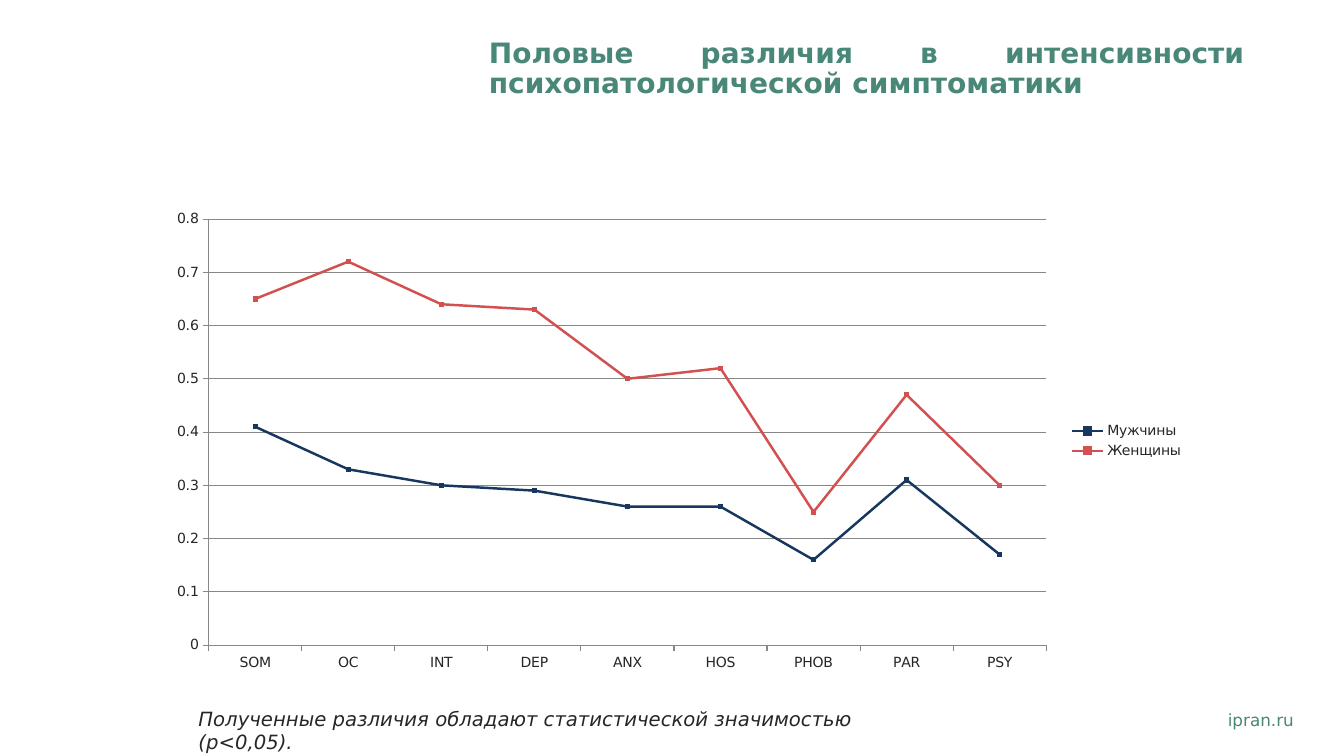
import pptx
import pptx.chart.data
import pptx.dml.color
import pptx.enum.chart
import pptx.enum.text
import pptx.util
from pptx.util import Inches

FONT = "DejaVu Sans"
COLORS = {
    "accent": "498779",
    "text": "262626",
    "grid": "878787",
    "men": "17375E",
    "women": "D25050",
}
SCALES = ("SOM", "OC", "INT", "DEP", "ANX", "HOS", "PHOB", "PAR", "PSY")
SERIES = (
    ("Мужчины", "men", (0.41, 0.33, 0.3, 0.29, 0.26, 0.26, 0.16, 0.31, 0.17)),
    ("Женщины", "women", (0.65, 0.72, 0.64, 0.63, 0.5, 0.52, 0.25, 0.47, 0.3)),
)


def rgb(name):
    return pptx.dml.color.RGBColor.from_string(COLORS[name])


def style_font(font, size, color):
    font.name = FONT
    font.size = pptx.util.Pt(size)
    font.color.rgb = rgb(color)


def add_text(slide, box, text, size, color):
    """Add a one-paragraph text box and return its paragraph."""
    shape = slide.shapes.add_textbox(*map(Inches, box))
    frame = shape.text_frame
    frame.word_wrap = True
    paragraph = frame.paragraphs[0]
    paragraph.text = text
    style_font(paragraph.font, size, color)
    return paragraph


def style_axis(axis):
    axis.major_tick_mark = pptx.enum.chart.XL_TICK_MARK.OUTSIDE
    axis.minor_tick_mark = pptx.enum.chart.XL_TICK_MARK.NONE
    axis.format.line.color.rgb = rgb("grid")
    axis.format.line.width = pptx.util.Pt(0.75)


def style_series(series, color):
    series.smooth = False
    series.format.line.color.rgb = rgb(color)
    series.format.line.width = pptx.util.Pt(1.75)
    marker = series.marker
    marker.style = pptx.enum.chart.XL_MARKER_STYLE.SQUARE
    marker.size = 3
    marker.format.fill.solid()
    marker.format.fill.fore_color.rgb = rgb(color)
    marker.format.line.color.rgb = rgb(color)


def add_symptom_chart(slide, box):
    data = pptx.chart.data.CategoryChartData()
    data.categories = SCALES
    for name, _, values in SERIES:
        data.add_series(name, values)
    chart = slide.shapes.add_chart(
        pptx.enum.chart.XL_CHART_TYPE.LINE_MARKERS, *map(Inches, box), data
    ).chart
    chart.has_title = False
    style_font(chart.font, 10, "text")
    chart.plots[0].vary_by_categories = False
    for series, (_, color, _) in zip(chart.plots[0].series, SERIES):
        style_series(series, color)

    style_axis(chart.category_axis)
    value_axis = chart.value_axis
    style_axis(value_axis)
    value_axis.minimum_scale, value_axis.maximum_scale = 0, 0.8
    value_axis.major_unit = 0.1
    value_axis.has_major_gridlines = True
    gridline = value_axis.major_gridlines.format.line
    gridline.color.rgb = rgb("grid")
    gridline.width = pptx.util.Pt(0.75)

    chart.has_legend = True
    chart.legend.position = pptx.enum.chart.XL_LEGEND_POSITION.RIGHT
    chart.legend.include_in_layout = False


def main():
    presentation = pptx.Presentation()
    presentation.slide_width = Inches(13.33)
    presentation.slide_height = Inches(7.5)
    slide = presentation.slides.add_slide(presentation.slide_layouts[6])

    add_text(slide, (12.08, 6.99, 1.04, 0.3), "ipran.ru", 12, "accent")
    title = add_text(
        slide, (4.75, 0.34, 7.69, 0.56),
        "Половые различия в интенсивности психопатологической симптоматики",
        20, "accent",
    )
    title.font.bold = True
    title.alignment = pptx.enum.text.PP_ALIGN.JUSTIFY
    title.line_spacing = 0.9
    add_symptom_chart(slide, (1.55, 2, 10.29, 4.75))
    caption = add_text(
        slide, (1.87, 6.96, 7.62, 0.34),
        "Полученные различия обладают статистической значимостью (p<0,05).",
        14, "text",
    )
    caption.font.italic = True

    presentation.save("out.pptx")


if __name__ == "__main__":
    main()
